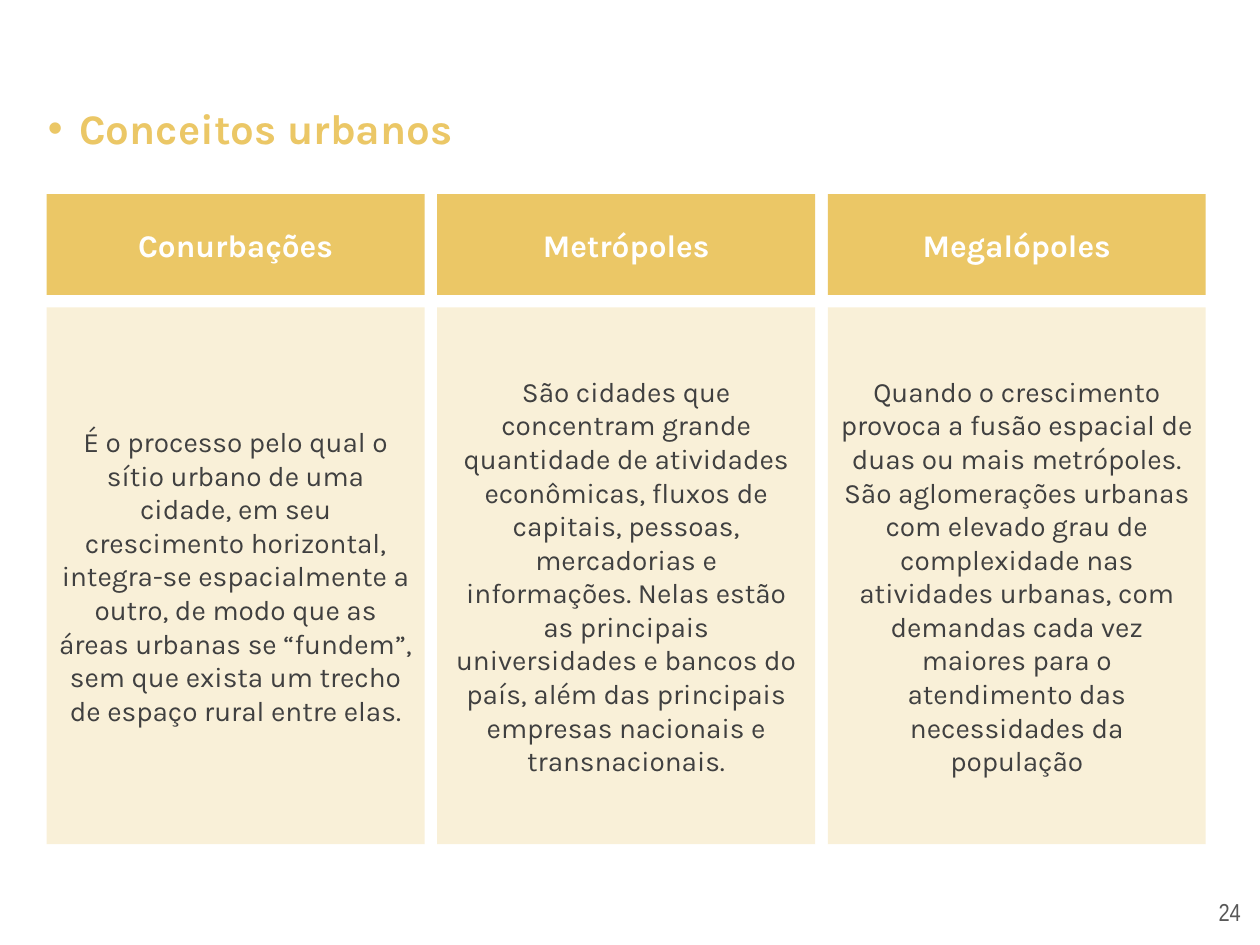
from dataclasses import dataclass

from lxml import etree
from pptx import Presentation
from pptx import util as u
from pptx.dml.color import RGBColor
from pptx.enum import shapes, text
from pptx.oxml import ns

GOLD = RGBColor(0xEB, 0xC7, 0x66)
DARK = RGBColor(0x40, 0x40, 0x40)
GRAY = RGBColor(0x58, 0x58, 0x58)
WHITE = RGBColor(0xFF, 0xFF, 0xFF)

LEFT = 0.37
WIDTH = 3
GAP = 0.1
HEADER_TOP = 1.54
HEADER_HEIGHT = 0.8
DEFINITION_TOP = HEADER_TOP + HEADER_HEIGHT + GAP
DEFINITION_HEIGHT = 4.26


@dataclass
class Concept:
    name: str
    definition: str


CONCEPTS = [
    Concept(
        "Conurbações",
        "É o processo pelo qual o sítio urbano de uma cidade, em seu crescimento "
        "horizontal, integra-se espacialmente a outro, de modo que as áreas urbanas "
        "se “fundem”, sem que exista um trecho de espaço rural entre elas.",
    ),
    Concept(
        "Metrópoles",
        "São cidades que concentram grande quantidade de atividades econômicas, "
        "fluxos de capitais, pessoas, mercadorias e informações. Nelas estão as "
        "principais universidades e bancos do país, além das principais empresas "
        "nacionais e transnacionais.",
    ),
    Concept(
        "Megalópoles",
        "Quando o crescimento provoca a fusão espacial de duas ou mais metrópoles. "
        "São aglomerações urbanas com elevado grau de complexidade nas atividades "
        "urbanas, com demandas cada vez maiores para o atendimento das necessidades "
        "da população",
    ),
]


def write(frame, content: str, *, size: float, color: RGBColor, font: str = "Karla",
          bold: bool = False, align=text.PP_ALIGN.CENTER, anchor=text.MSO_ANCHOR.MIDDLE):
    frame.word_wrap = True
    frame.vertical_anchor = anchor
    paragraph = frame.paragraphs[0]
    paragraph.alignment = align
    run = paragraph.add_run()
    run.text = content
    run.font.name = font
    run.font.size = u.Pt(size)
    run.font.bold = bold
    run.font.color.rgb = color
    return paragraph


def add_bullet(paragraph, color: RGBColor, indent: float) -> None:
    properties = paragraph._p.get_or_add_pPr()
    properties.set("marL", str(u.Inches(indent)))
    properties.set("indent", str(-u.Inches(indent)))
    bullet_color = etree.SubElement(properties, ns.qn("a:buClr"))
    etree.SubElement(bullet_color, ns.qn("a:srgbClr"), val=str(color))
    etree.SubElement(properties, ns.qn("a:buFont"), typeface="Arial")
    etree.SubElement(properties, ns.qn("a:buChar"), char="•")


def add_panel(slide, left: float, top: float, height: float, opacity: int = 100):
    panel = slide.shapes.add_shape(
        shapes.MSO_SHAPE.RECTANGLE,
        u.Inches(left), u.Inches(top), u.Inches(WIDTH), u.Inches(height),
    )
    panel.shadow.inherit = False
    panel.fill.solid()
    panel.fill.fore_color.rgb = GOLD
    panel.line.fill.background()
    if opacity < 100:
        fill_color = panel.element.spPr.find(".//" + ns.qn("a:srgbClr"))
        etree.SubElement(fill_color, ns.qn("a:alpha"), val=str(opacity * 1000))
    return panel.text_frame


def add_concept(slide, concept: Concept, column: int) -> None:
    left = LEFT + column * (WIDTH + GAP)
    definition = add_panel(slide, left, DEFINITION_TOP, DEFINITION_HEIGHT, opacity=25)
    write(definition, concept.definition, size=16, color=DARK)
    header = add_panel(slide, left, HEADER_TOP, HEADER_HEIGHT)
    write(header, concept.name, size=18, color=WHITE, bold=True)


def main() -> None:
    deck = Presentation()
    deck.slide_width = u.Inches(10)
    deck.slide_height = u.Inches(7.5)
    slide = deck.slides.add_slide(deck.slide_layouts[1])

    title = slide.shapes.title.element
    title.getparent().remove(title)

    topic = slide.placeholders[1]
    topic.left, topic.top = u.Inches(0.28), u.Inches(0.81)
    topic.width, topic.height = u.Inches(9.45), u.Inches(5.99)
    heading = write(topic.text_frame, "Conceitos urbanos", size=24, color=GOLD, bold=True,
                    align=text.PP_ALIGN.LEFT, anchor=text.MSO_ANCHOR.TOP)
    heading.line_spacing = 0.9
    heading.space_before = u.Pt(0)
    add_bullet(heading, GOLD, 0.25)

    for column, concept in enumerate(CONCEPTS):
        add_concept(slide, concept, column)

    page_number = slide.shapes.add_textbox(
        u.Inches(9.44), u.Inches(7.07), u.Inches(0.64), u.Inches(0.34)
    )
    write(page_number.text_frame, "24", size=14, color=GRAY, font="Arial Narrow",
          anchor=text.MSO_ANCHOR.TOP)

    deck.save("out.pptx")


if __name__ == "__main__":
    main()
